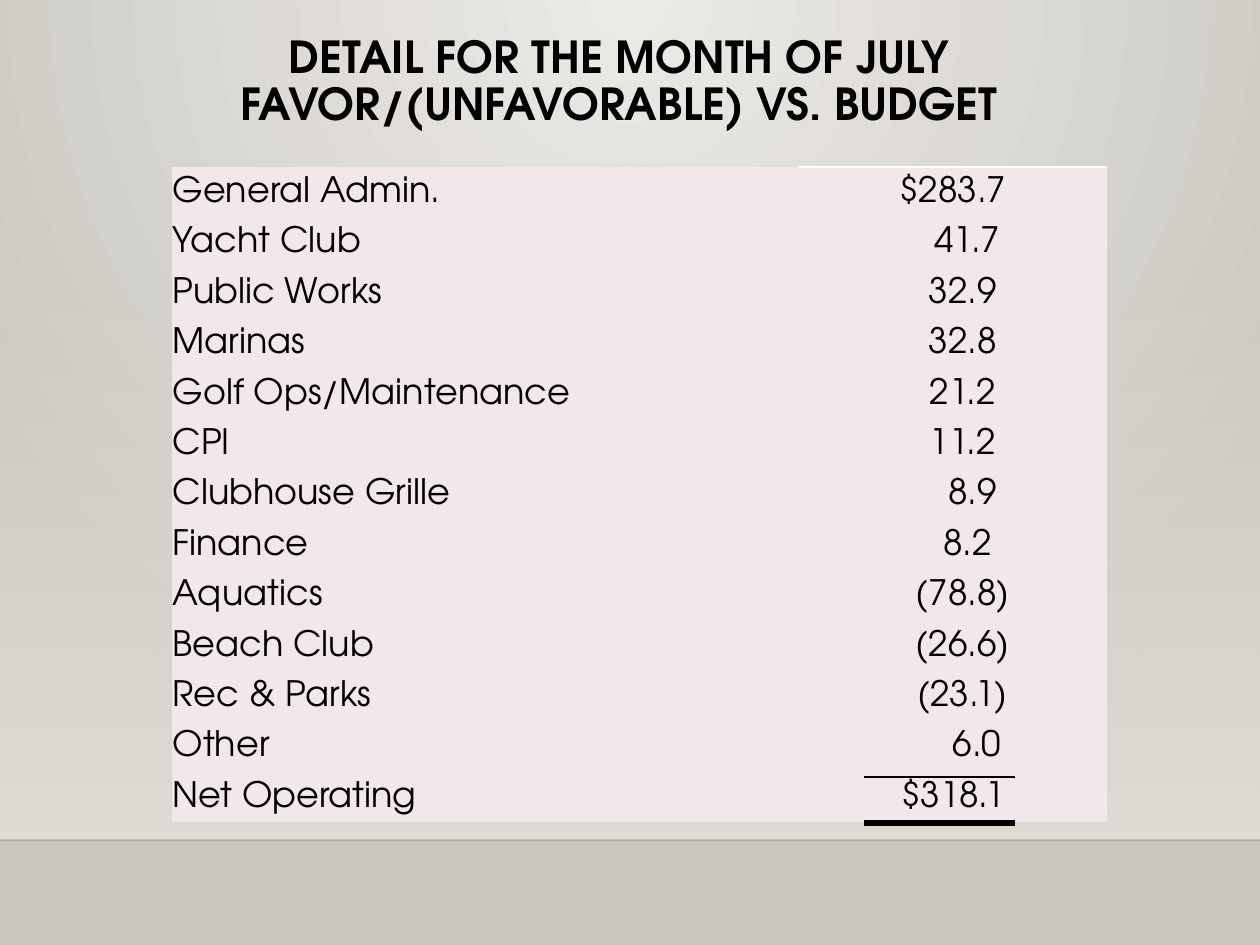
from lxml import etree
from pptx import Presentation
from pptx.dml.color import RGBColor
from pptx.enum.shapes import MSO_CONNECTOR, MSO_SHAPE
from pptx.enum.text import MSO_ANCHOR, PP_ALIGN
from pptx.oxml.ns import qn
from pptx.util import Cm, Pt

STRAIGHT = MSO_CONNECTOR.STRAIGHT
RECTANGLE = MSO_SHAPE.RECTANGLE
CENTER, LEFT = PP_ALIGN.CENTER, PP_ALIGN.LEFT
MIDDLE, TOP = MSO_ANCHOR.MIDDLE, MSO_ANCHOR.TOP

FONT = "TeX Gyre Adventor"
PLAIN_TABLE_STYLE = "{2D5ABB26-0587-4C30-8999-92F81FD0307C}"
COLORS = {
    "glow": "ECEAE7",
    "edge": "CAC7C1",
    "wall": "DFDBD5",
    "floor": "000001",
    "text": "000000",
    "cell": "F3E8E9",
    "border": "FFFFFF",
}

TITLE = "DETAIL FOR THE MONTH OF JULY\vFAVOR/(UNFAVORABLE) VS. BUDGET"
# Department, variance, indent steps of the variance
ROWS = [
    ("General Admin.", "$283.7", 0),
    ("Yacht Club", "41.7", 3),
    ("Public Works", "32.9", 2),
    ("Marinas", "32.8", 2),
    ("Golf Ops/Maintenance", "21.2", 2),
    ("CPI", "11.2", 2),
    ("Clubhouse Grille", "8.9", 4),
    ("Finance", "8.2", 3),
    ("Aquatics", "(78.8)", 2),
    ("Beach Club", "(26.6)", 2),
    ("Rec & Parks", "(23.1)", 2),
    ("Other", "6.0", 5),
    ("Net Operating", "$318.1", 0),
]
# Height and weight of the rules around the total
TOTAL_RULES = [(16.59, 3), (15.67, 1.25)]

PAGE_WIDTH, PAGE_HEIGHT = 25.4, 19.05
FLOOR_TOP = 16.94
WALL_TOP = 5.59
TABLE_LEFT, TABLE_TOP = 3.46, 3.37
COLUMN_WIDTHS = [12.65, 6.2]
ROW_HEIGHT = 1.016
INDENT_STEP = 0.195
CELL_INSET = 0.02


def rgb(name):
    return RGBColor.from_string(COLORS[name])


def set_alpha(color_element, percent):
    etree.SubElement(color_element, qn("a:alpha"), val=str(percent * 1000))


def set_gradient(fill, start, end):
    fill.gradient()
    for stop, name in zip(fill.gradient_stops, (start, end)):
        stop.color.rgb = rgb(name)


def add_line(slide, left, right, height, color, weight):
    line = slide.shapes.add_connector(
        STRAIGHT, Cm(left), Cm(height), Cm(right), Cm(height))
    line.line.color.rgb = rgb(color)
    line.line.width = Pt(weight)
    etree.SubElement(line.element.spPr, qn("a:effectLst"))
    return line


def format_paragraph(para, size, align, bold=False):
    para.alignment = align
    for span in para.runs:
        span.font.name = FONT
        span.font.size = Pt(size)
        span.font.bold = bold
        span.font.color.rgb = rgb("text")


def add_background(slide):
    # Round glow from the top centre
    set_gradient(slide.background.fill, "glow", "edge")
    gradient = slide.element.find(".//" + qn("p:bgPr")).find(qn("a:gradFill"))
    gradient.remove(gradient.find(qn("a:lin")))
    glow = etree.SubElement(gradient, qn("a:path"))
    glow.set("path", "circle")
    etree.SubElement(glow, qn("a:fillToRect"), l="43000", r="43000", b="100000")

    # Wall fading in down to the floor
    wall = slide.shapes.add_shape(
        RECTANGLE, 0, Cm(WALL_TOP), Cm(PAGE_WIDTH), Cm(FLOOR_TOP - WALL_TOP))
    wall.shadow.inherit = False
    wall.line.fill.background()
    set_gradient(wall.fill, "wall", "wall")
    wall.fill.gradient_angle = 270
    set_alpha(wall.element.spPr.find(".//" + qn("a:srgbClr")), 0)

    floor = add_line(slide, 0, PAGE_WIDTH, FLOOR_TOP, "floor", 1)
    set_alpha(floor.element.spPr.find(".//" + qn("a:srgbClr")), 20)


def add_title(slide):
    box = slide.shapes.add_textbox(Cm(2.06), Cm(0.58), Cm(20.83), Cm(3.4))
    frame = box.text_frame
    frame.word_wrap = True
    frame.vertical_anchor = TOP
    para = frame.paragraphs[0]
    para.text = TITLE
    para.line_spacing = 0.9
    format_paragraph(para, 25.2, CENTER, bold=True)


def fill_cell(cell, text, align, indent=0):
    cell.fill.solid()
    cell.fill.fore_color.rgb = rgb("cell")
    cell.vertical_anchor = MIDDLE
    cell.margin_left = Cm(CELL_INSET + indent)
    cell.margin_right = cell.margin_top = Cm(CELL_INSET)
    cell.margin_bottom = 0
    para = cell.text_frame.paragraphs[0]
    para.text = text
    format_paragraph(para, 20, align)


def add_top_border(cell):
    border = etree.Element(qn("a:lnT"), w=str(Pt(1)))
    solid = etree.SubElement(border, qn("a:solidFill"))
    etree.SubElement(solid, qn("a:srgbClr"), val=COLORS["border"])
    cell._tc.get_or_add_tcPr().insert(0, border)


def add_variance_table(slide):
    frame = slide.shapes.add_table(
        len(ROWS), len(COLUMN_WIDTHS), Cm(TABLE_LEFT), Cm(TABLE_TOP),
        Cm(sum(COLUMN_WIDTHS)), Cm(ROW_HEIGHT * len(ROWS)))
    table = frame.table
    table.first_row = table.horz_banding = False
    frame.element.find(".//" + qn("a:tableStyleId")).text = PLAIN_TABLE_STYLE
    for column, width in zip(table.columns, COLUMN_WIDTHS):
        column.width = Cm(width)
    for index, (department, variance, steps) in enumerate(ROWS):
        table.rows[index].height = Cm(ROW_HEIGHT)
        fill_cell(table.cell(index, 0), department, LEFT)
        fill_cell(table.cell(index, 1), variance, CENTER, steps * INDENT_STEP)
    add_top_border(table.cell(0, 1))


def main():
    deck = Presentation()
    deck.slide_width, deck.slide_height = Cm(PAGE_WIDTH), Cm(PAGE_HEIGHT)
    slide = deck.slides.add_slide(deck.slide_layouts[6])
    add_background(slide)
    add_title(slide)
    add_variance_table(slide)
    for height, weight in TOTAL_RULES:
        add_line(slide, 17.42, 20.47, height, "text", weight)
    deck.save("out.pptx")


if __name__ == "__main__":
    main()
